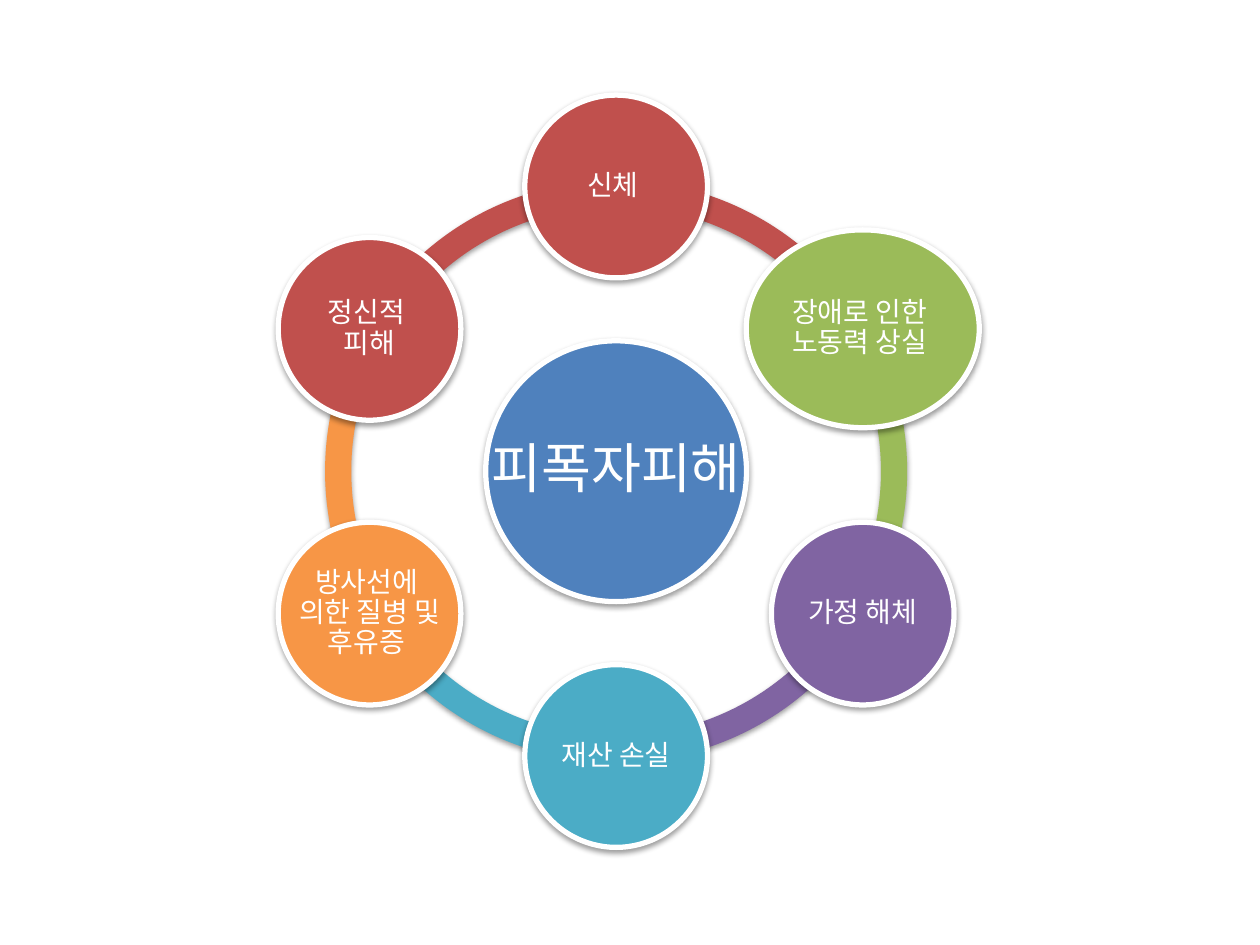
from copy import deepcopy
from math import cos, radians, sin

from lxml.etree import SubElement
from pptx import Presentation
from pptx.dml.color import RGBColor as RGB
from pptx.enum.shapes import MSO_SHAPE as Shape
from pptx.enum.text import MSO_ANCHOR as Anchor, PP_ALIGN as Align
from pptx.oxml.ns import qn
from pptx.util import Inches, Pt

THEME = {
    "font": "Noto Sans CJK KR",
    "white": RGB.from_string("FFFFFF"),
    "blue": RGB.from_string("4F81BD"),
    "red": RGB.from_string("C0504D"),
    "green": RGB.from_string("9BBB59"),
    "violet": RGB.from_string("8064A2"),
    "aqua": RGB.from_string("4BACC6"),
    "orange": RGB.from_string("F79646"),
    "hub_size": Pt(31),
    "node_size": Pt(16),
    "edge": Pt(3),
}
MID_X, MID_Y = 4.89, 3.74
ORBIT = 2.26
RING = 4.62
HUB = 2.07
NODE = 1.45
NODES = [  # clockwise from the top: text, colour, width, height
    ("신체 ", "red", NODE, NODE),
    ("장애로 인한 \n노동력 상실 ", "green", 1.85, 1.57),
    ("가정 해체", "violet", NODE, NODE),
    ("재산 손실", "aqua", NODE, NODE),
    ("방사선에 \n의한 질병 및 후유증 ", "orange", NODE, NODE),
    ("정신적 \n피해", "red", NODE, NODE),
]
STEP = 360 / len(NODES)


def draw(kind, box, color):
    """Add a filled shape with a soft shadow below it."""
    shape = slide.shapes.add_shape(kind, *box)
    shape.fill.solid()
    shape.fill.fore_color.rgb = THEME[color]
    shape.line.fill.background()
    shape.shadow.inherit = False
    glow = shape._element.spPr.find(qn("a:effectLst"))
    drop = SubElement(glow, qn("a:outerShdw"), blurRad="40000", dist="20000",
                      dir="5400000", rotWithShape="0")
    tint = SubElement(drop, qn("a:srgbClr"), val="000000")
    SubElement(tint, qn("a:alpha"), val="38000")
    return shape


def frame(x, y, wide, high):
    """Turn a centre and a size into left, top, width and height."""
    return [Inches(n) for n in (x - wide / 2, y - high / 2, wide, high)]


deck = Presentation()
deck.slide_width, deck.slide_height = Inches(10), Inches(7.5)
slide = deck.slides.add_slide(deck.slide_layouts[6])

# Ring: one arc from each node to the next, last one at the back
for i, (_, color, _, _) in reversed(list(enumerate(NODES))):
    arc = draw(Shape.BLOCK_ARC, frame(MID_X, MID_Y, RING, RING), color)
    turn = 270 + i * STEP
    # Angles are stored in 1/60000 degree, adjustments in 1/100000
    arc.adjustments[0] = turn % 360 * 0.6
    arc.adjustments[1] = (turn + STEP) % 360 * 0.6
    arc.adjustments[2] = 0.045

# Hub first, then the nodes on their orbit
discs = [("피폭자피해", "blue", frame(MID_X, MID_Y, HUB, HUB), "hub_size", 0.04)]
for i, (text, color, wide, high) in enumerate(NODES):
    turn = radians(270 + i * STEP)
    x, y = MID_X + ORBIT * cos(turn), MID_Y + ORBIT * sin(turn)
    discs.append((text, color, frame(x, y, wide, high), "node_size", 0.02))

for text, color, box, size, pad in discs:
    disc = draw(Shape.OVAL, box, color)
    disc.line.color.rgb = THEME["white"]
    disc.line.width = THEME["edge"]

    body = slide.shapes.add_textbox(*box).text_frame
    body.word_wrap = True
    body.vertical_anchor = Anchor.MIDDLE
    for side in ("left", "top", "right", "bottom"):
        setattr(body, f"margin_{side}", Inches(pad))
    para = body.paragraphs[0]
    para.text = text
    look = {"alignment": Align.CENTER, "line_spacing": 0.9,
            "space_after": int(THEME[size] * 0.35)}
    for name, value in look.items():
        setattr(para, name, value)
    for run in para.runs:
        run.font.size = THEME[size]
        run.font.name = THEME["font"]
        run.font.color.rgb = THEME["white"]
        SubElement(run.font._element, qn("a:ea"), typeface=THEME["font"])
    for gap in para._p.findall(qn("a:br")):
        gap.append(deepcopy(para.runs[0].font._element))

deck.save("out.pptx")
